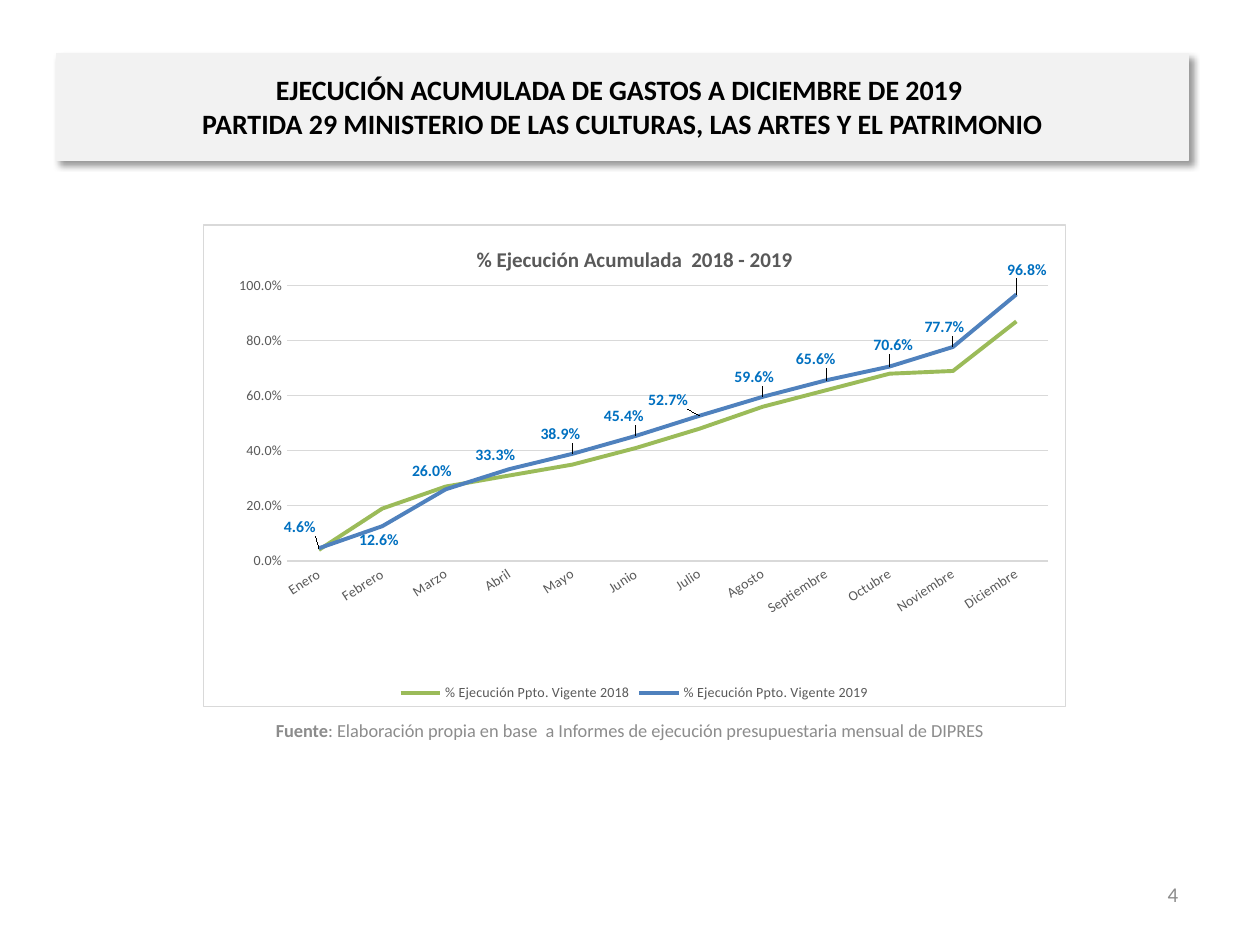
import lxml.etree
import pptx
import pptx.chart.data
import pptx.dml.color
import pptx.enum.chart
import pptx.enum.text
import pptx.oxml
import pptx.oxml.ns
import pptx.util

Pt = pptx.util.Pt
ALIGN = pptx.enum.text.PP_ALIGN
NAMESPACES = pptx.oxml.ns.nsdecls("c", "a")
COLORS = {"black": "000000", "panel": "F2F2F2", "muted": "8C8C8C", "axis": "595959",
          "rule": "D9D9D9", "white": "FFFFFF", "2018": "9BBB59", "2019": "4F81BD",
          "label": "0070C0"}
MONTHS = ["Enero", "Febrero", "Marzo", "Abril", "Mayo", "Junio", "Julio", "Agosto",
          "Septiembre", "Octubre", "Noviembre", "Diciembre"]
EXECUTION = {
    "2018": [0.04, 0.19, 0.27, 0.31, 0.35, 0.41, 0.48, 0.56, 0.62, 0.68, 0.69, 0.87],
    "2019": [0.046, 0.126, 0.26, 0.333, 0.389, 0.454, 0.527, 0.596, 0.656, 0.706,
             0.777, 0.968]}
LABEL_SHIFTS = [(-11, -4), (-2, 0), (-8, -2), (-8, 0), (-7, -3), (-7, -3), (-18, -1),
                (-5, -3), (-6, -4), (2, -4), (-5, -3), (6, -6)]


def color(name):
    return pptx.dml.color.RGBColor.from_string(COLORS[name])


def layout_xml(x, y, size=""):
    return (f'<c:layout {NAMESPACES}><c:manualLayout>{size}'
            f'<c:x val="{x}"/><c:y val="{y}"/></c:manualLayout></c:layout>')


class BudgetSlide:
    """Holds the type style and the current slide, and adds its elements."""

    def __init__(self, deck, font_name="Calibri"):
        self.font_name = font_name
        self.slide = deck.slides.add_slide(deck.slide_layouts[5])

    def style(self, font, size, color_name, bold=False):
        font.name, font.size, font.bold = self.font_name, Pt(size), bold
        font.color.rgb = color(color_name)

    def title(self, text, left, top, width, height):
        heading = self.slide.shapes.title
        heading.left, heading.top = Pt(left), Pt(top)
        heading.width, heading.height = Pt(width), Pt(height)
        heading.fill.solid()
        heading.fill.fore_color.rgb = heading.line.color.rgb = color("panel")
        heading.line.width = Pt(0.75)
        heading._element.spPr.append(pptx.oxml.parse_xml(
            f'<a:effectLst {NAMESPACES}><a:outerShdw blurRad="{Pt(4)}" dist="{Pt(3)}" '
            f'dir="2700000" algn="tl" rotWithShape="0"><a:srgbClr val="{COLORS["black"]}">'
            '<a:alpha val="40000"/></a:srgbClr></a:outerShdw></a:effectLst>'))
        heading.text_frame.text = text
        heading.text_frame.auto_size = pptx.enum.text.MSO_AUTO_SIZE.NONE
        heading.text_frame.vertical_anchor = pptx.enum.text.MSO_ANCHOR.MIDDLE
        paragraph = heading.text_frame.paragraphs[0]
        paragraph.alignment = ALIGN.CENTER
        self.style(paragraph.font, 16, "black", True)

    def text(self, parts, left, top, width, height, size, alignment):
        frame = self.slide.shapes.add_textbox(
            Pt(left), Pt(top), Pt(width), Pt(height)).text_frame
        frame.word_wrap = True
        frame.vertical_anchor = pptx.enum.text.MSO_ANCHOR.MIDDLE
        paragraph = frame.paragraphs[0]
        paragraph.alignment = alignment
        self.style(paragraph.font, size, "muted")
        for words, bold in parts:
            run = paragraph.add_run()
            run.text = words
            if bold:
                run.font.bold = True

    def line_chart(self, heading, left, top, width, height):
        data = pptx.chart.data.CategoryChartData(number_format="0.0%")
        data.categories = MONTHS
        for year, values in EXECUTION.items():
            data.add_series(f"% Ejecución Ppto. Vigente {year}", values)
        chart = self.slide.shapes.add_chart(
            pptx.enum.chart.XL_CHART_TYPE.LINE, Pt(left), Pt(top), Pt(width), Pt(height),
            data).chart
        self.style(chart.font, 10, "black")
        chart.has_title = True
        chart.chart_title.include_in_layout = False
        chart.chart_title.text_frame.text = heading
        self.style(chart.chart_title.text_frame.paragraphs[0].font, 12, "axis", True)
        chart.has_legend = True
        chart.legend.position = pptx.enum.chart.XL_LEGEND_POSITION.BOTTOM
        chart.legend.include_in_layout = False
        self.style(chart.legend.font, 8, "axis")
        self.axes(chart)
        for year, series in zip(EXECUTION, chart.plots[0].series):
            series.smooth = False
            series.marker.style = pptx.enum.chart.XL_MARKER_STYLE.NONE
            series.format.line.color.rgb = color(year)
            series.format.line.width = Pt(2.25)
        chart.plots[0].vary_by_categories = False
        self.point_labels(chart.plots[0].series[1], width, height)
        self.chart_frame(chart)

    def axes(self, chart):
        months, percent = chart.category_axis, chart.value_axis
        for axis in (months, percent):
            axis.major_tick_mark = axis.minor_tick_mark = pptx.enum.chart.XL_TICK_MARK.NONE
            self.style(axis.tick_labels.font, 8, "axis")
        months.format.line.color.rgb = color("rule")
        months.format.line.width = Pt(1)
        months._element.find(".//" + pptx.oxml.ns.qn("a:bodyPr")).set("rot", "-1980000")
        percent.minimum_scale, percent.maximum_scale, percent.major_unit = 0, 1, 0.2
        percent.format.line.fill.background()
        percent.major_gridlines.format.line.color.rgb = color("rule")
        percent.major_gridlines.format.line.width = Pt(0.75)
        percent.tick_labels.number_format = "0.0%"
        percent.tick_labels.number_format_is_linked = False

    def point_labels(self, series, width, height):
        labels = series.data_labels
        labels.show_value = True
        labels.number_format, labels.number_format_is_linked = "0.0%", False
        self.style(labels.font, 9, "label", True)
        place = pptx.enum.chart.XL_LABEL_POSITION
        for index, (across, down) in enumerate(LABEL_SHIFTS):
            label = series.points[index].data_label
            self.style(label.font, 9, "label", True)
            label.position = place.BELOW if MONTHS[index] == "Febrero" else place.ABOVE
            position = series._element.find(
                f'.//{pptx.oxml.ns.qn("c:dLbl")}/{pptx.oxml.ns.qn("c:idx")}[@val="{index}"]')
            position.addnext(pptx.oxml.parse_xml(
                f'<c:numFmt {NAMESPACES} formatCode="0.0%" sourceLinked="0"/>'))
            position.addnext(pptx.oxml.parse_xml(
                layout_xml(round(across / width, 4), round(down / height, 4))))

    def chart_frame(self, chart):
        plot_area = chart._chartSpace.chart.plotArea
        for automatic in plot_area.findall(pptx.oxml.ns.qn("c:layout")):
            plot_area.remove(automatic)
        inner = pptx.oxml.parse_xml(layout_xml(
            0.097, 0.126, '<c:layoutTarget val="inner"/><c:xMode val="edge"/>'
            '<c:yMode val="edge"/>'))
        for side, share in (("w", 0.883), ("h", 0.572)):
            lxml.etree.SubElement(inner[0], pptx.oxml.ns.qn(f"c:{side}")).set("val", str(share))
        plot_area.insert(0, inner)
        chart._chartSpace.chart.addnext(pptx.oxml.parse_xml(
            f'<c:spPr {NAMESPACES}><a:solidFill><a:srgbClr val="{COLORS["white"]}"/>'
            f'</a:solidFill><a:ln w="{Pt(0.75)}"><a:solidFill>'
            f'<a:srgbClr val="{COLORS["rule"]}"/></a:solidFill></a:ln></c:spPr>'))


def main():
    deck = pptx.Presentation()
    deck.slide_width, deck.slide_height = Pt(720), Pt(540)
    page = BudgetSlide(deck)
    page.text([("4", False)], 512.6, 496.8, 167.8, 28.8, 12, ALIGN.RIGHT)
    page.title("EJECUCIÓN ACUMULADA DE GASTOS A DICIEMBRE DE 2019 \v"
               "PARTIDA 29 MINISTERIO DE LAS CULTURAS, LAS ARTES Y EL PATRIMONIO",
               32.4, 30.4, 646.6, 61)
    page.text([("Fuente", True),
               (": Elaboración propia en base  a Informes de ejecución presupuestaria "
                "mensual de DIPRES", False)], 54, 405.4, 612, 23.8, 10.5, ALIGN.CENTER)
    page.line_chart("% Ejecución Acumulada  2018 - 2019", 116, 128.2, 493.2, 275.8)
    deck.save("out.pptx")


if __name__ == "__main__":
    main()
